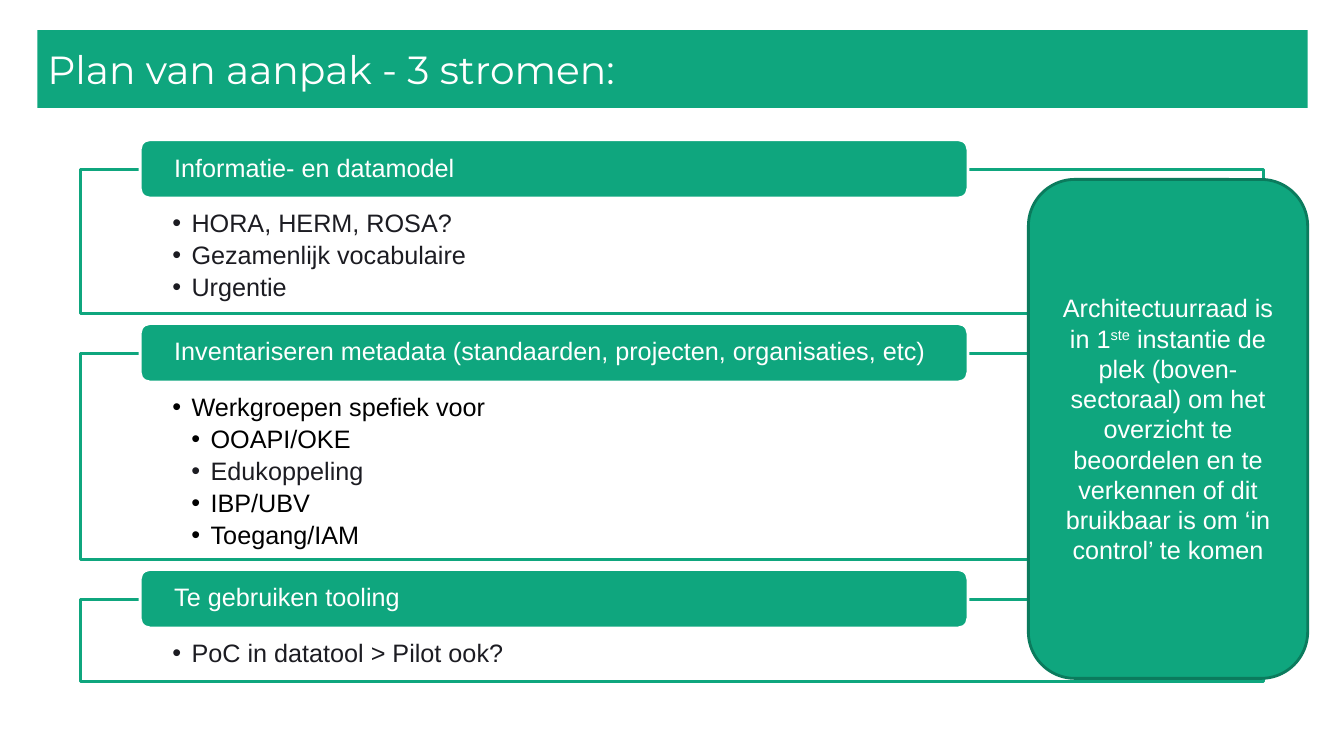
import lxml.etree
import pptx
import pptx.dml.color
import pptx.enum.shapes
import pptx.enum.text
import pptx.oxml.ns
import pptx.util

SHAPES = pptx.enum.shapes.MSO_SHAPE
ANCHOR = pptx.enum.text.MSO_ANCHOR
ALIGN = pptx.enum.text.PP_ALIGN
INCH = pptx.util.Inches

COLOURS = {
    "green": "0FA67E",
    "dark green": "0B7B5D",
    "white": "FFFFFF",
    "ink": "1C1C22",
    "black": "000000",
}

STREAMS = [
    ("Informatie- en datamodel", [
        (1, "HORA, HERM, ROSA?", "ink"),
        (1, "Gezamenlijk vocabulaire", "ink"),
        (1, "Urgentie", "ink"),
    ]),
    ("Inventariseren metadata (standaarden, projecten, organisaties, etc)", [
        (1, "Werkgroepen spefiek voor", "black"),
        (2, "OOAPI/OKE", "black"),
        (2, "Edukoppeling", "ink"),
        (2, "IBP/UBV", "black"),
        (2, "Toegang/IAM", "black"),
    ]),
    ("Te gebruiken tooling", [
        (1, "PoC in datatool > Pilot ook?", "ink"),
    ]),
]


class StreamPage:
    """Draws styled elements on one page, placed in percentages of its size."""

    def __init__(self, deck):
        self.width, self.height = deck.slide_width, deck.slide_height
        self.page = deck.slides.add_slide(deck.slide_layouts[6])

    def colour(self, name):
        return pptx.dml.color.RGBColor.from_string(COLOURS[name])

    def apply(self, target, values):
        for name, value in values.items():
            setattr(target, name, value)

    def block(self, kind, place, fill, line=None, **frame):
        left, top, width, height = place
        box = self.page.shapes.add_shape(
            kind,
            round(self.width * left / 100), round(self.height * top / 100),
            round(self.width * width / 100), round(self.height * height / 100))
        box.shadow.inherit = False
        box.fill.solid()
        box.fill.fore_color.rgb = self.colour(fill)
        if line:
            box.line.color.rgb = self.colour(line)
            box.line.width = pptx.util.Pt(2)
        else:
            box.line.fill.background()
        self.apply(box.text_frame, {
            "word_wrap": True, "vertical_anchor": ANCHOR.MIDDLE, **frame})
        return box

    def span(self, para, text, colour="white", size=18, font="Arial"):
        span = para.add_run()
        span.text = text
        self.apply(span.font, {"name": font, "size": pptx.util.Pt(size)})
        span.font.color.rgb = self.colour(colour)
        return span

    def title(self, text):
        box = self.block(SHAPES.RECTANGLE, (2.78, 4, 94.52, 10.27), "green")
        para = box.text_frame.paragraphs[0]
        para.alignment = ALIGN.LEFT
        self.span(para, text, size=28, font="Montserrat")

    def bullet(self, para, level, text, colour):
        properties = para._p.get_or_add_pPr()
        properties.set("marL", str(INCH(0.19 * level)))
        properties.set("indent", str(INCH(-0.19)))
        for tag, name, value in (("a:buFont", "typeface", "Arial"),
                                 ("a:buChar", "char", "•")):
            mark = lxml.etree.SubElement(properties, pptx.oxml.ns.qn(tag))
            mark.set(name, value)
        self.apply(para, {"level": level, "alignment": ALIGN.LEFT,
                          "line_spacing": 0.9,
                          "space_after": pptx.util.Pt(3.5)})
        self.span(para, text, colour)

    def stream(self, top, heading, points):
        height = 6.83 + 4.1 * len(points)
        frame = self.block(
            SHAPES.RECTANGLE, (6, top, 88, height), "white", "green",
            vertical_anchor=ANCHOR.TOP,
            margin_left=INCH(0.91), margin_right=INCH(0.91),
            margin_top=INCH(0.41), margin_bottom=INCH(0.14))
        for index, point in enumerate(points):
            words = frame.text_frame
            para = words.add_paragraph() if index else words.paragraphs[0]
            self.bullet(para, *point)
        label = self.block(
            SHAPES.ROUNDED_RECTANGLE, (10.43, top - 3.93, 61.59, 7.73),
            "green", "white", margin_left=INCH(0.31),
            margin_right=INCH(0.31), margin_top=0, margin_bottom=0)
        para = label.text_frame.paragraphs[0]
        self.apply(para, {"alignment": ALIGN.LEFT, "line_spacing": 0.9})
        self.span(para, heading)
        return top + height

    def council(self, before, raised, after):
        box = self.block(SHAPES.ROUNDED_RECTANGLE, (76.52, 23.73, 20.78, 66),
                         "green", "dark green")
        para = box.text_frame.paragraphs[0]
        para.alignment = ALIGN.CENTER
        self.span(para, before)
        self.span(para, raised).font._element.set("baseline", "30000")
        self.span(para, after)


def main():
    deck = pptx.Presentation()
    deck.slide_width, deck.slide_height = INCH(13.33), INCH(7.5)
    plan = StreamPage(deck)
    plan.title("Plan van aanpak - 3 stromen:")
    top = 22.4
    for heading, points in STREAMS:
        top = plan.stream(top, heading, points) + 5.2
    plan.council(
        "Architectuurraad is in 1", "ste",
        " instantie de plek (boven-sectoraal) om het overzicht te beoordelen "
        "en te verkennen of dit bruikbaar is om ‘in control’ te komen")
    deck.save("out.pptx")


if __name__ == "__main__":
    main()
